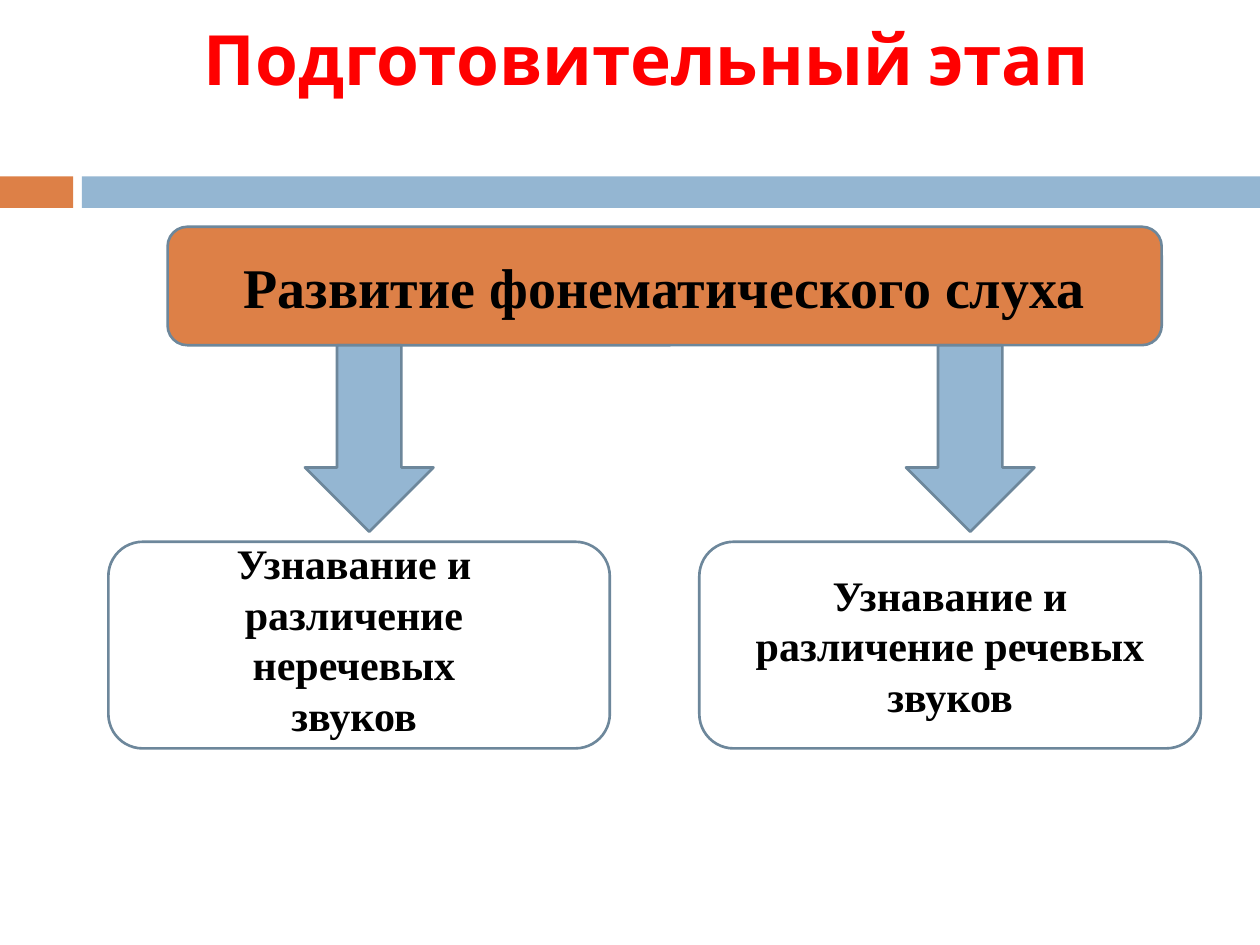
from dataclasses import dataclass

from pptx import Presentation
from pptx.dml.color import RGBColor
from pptx.enum.shapes import MSO_SHAPE
from pptx.enum.text import MSO_ANCHOR, PP_ALIGN
from pptx.util import Inches, Pt


@dataclass(frozen=True)
class Theme:
    orange: str = "DD8047"
    blue: str = "94B6D2"
    outline: str = "6D879B"
    white: str = "FFFFFF"
    red: str = "FF0000"
    black: str = "000000"
    title_font: str = "Cabin"
    body_font: str = "Times New Roman"
    title_size: float = 39.6
    topic_size: float = 32
    branch_size: float = 24
    line_width: float = 1.5


TITLE = "Подготовительный этап"
TOPIC = "Развитие фонематического слуха"
BRANCHES = [
    "Узнавание и различение неречевых звуков",
    "Узнавание и различение речевых звуков",
]
# left, top, width, height in inches
STRIPES = [((0, 1.4, 0.58, 0.25), Theme.orange), ((0.65, 1.4, 9.35, 0.25), Theme.blue)]
TITLE_BOX = (0.67, 0.25, 8.92, 1.08)
TOPIC_BOX = (1.33, 1.8, 7.89, 0.94)
LEFT_LABEL_BOX = (1.48, 4.22, 2.66, 1.72)
BRANCH_LEFTS, BRANCH_AREA = (0.86, 5.55), (4.3, 3.98, 1.64)
ARROW_LEFTS, ARROW_AREA = (2.42, 7.19), (2.74, 1.02, 1.48)


def add_box(slide, kind, box, fill, outlined=True):
    sp = slide.shapes.add_shape(kind, *map(Inches, box))
    sp.shadow.inherit = False
    sp.fill.solid()
    sp.fill.fore_color.rgb = RGBColor.from_string(fill)
    if outlined:
        sp.line.color.rgb = RGBColor.from_string(Theme.outline)
        sp.line.width = Pt(Theme.line_width)
    else:
        sp.line.fill.background()
    return sp


def write(sp, text, size, font=Theme.body_font, color=Theme.black,
          anchor=MSO_ANCHOR.MIDDLE):
    tf = sp.text_frame
    tf.word_wrap = True
    tf.vertical_anchor = anchor
    p = tf.paragraphs[0]
    p.alignment = PP_ALIGN.CENTER
    r = p.add_run()
    r.text = text
    r.font.name, r.font.size, r.font.bold = font, Pt(size), True
    r.font.color.rgb = RGBColor.from_string(color)
    return tf


def main():
    prs = Presentation()
    prs.slide_width, prs.slide_height = Inches(10), Inches(7.5)
    s = prs.slides.add_slide(prs.slide_layouts[6])

    for box, color in STRIPES:
        add_box(s, MSO_SHAPE.RECTANGLE, box, color, outlined=False)

    title = s.shapes.add_textbox(*map(Inches, TITLE_BOX))
    tf = write(title, TITLE, Theme.title_size, Theme.title_font, Theme.red)
    tf.margin_top, tf.margin_bottom = 0, Inches(0.67)  # keeps the title high

    topic = add_box(s, MSO_SHAPE.ROUNDED_RECTANGLE, TOPIC_BOX, Theme.orange)
    write(topic, TOPIC, Theme.topic_size)

    _, right = [
        add_box(s, MSO_SHAPE.ROUNDED_RECTANGLE, (x, *BRANCH_AREA), Theme.white)
        for x in BRANCH_LEFTS
    ]
    label = s.shapes.add_textbox(*map(Inches, LEFT_LABEL_BOX))
    write(label, BRANCHES[0], Theme.branch_size, anchor=MSO_ANCHOR.TOP)
    write(right, BRANCHES[1], Theme.branch_size)

    for x in ARROW_LEFTS:
        add_box(s, MSO_SHAPE.DOWN_ARROW, (x, *ARROW_AREA), Theme.blue)

    prs.save("out.pptx")


if __name__ == "__main__":
    main()
